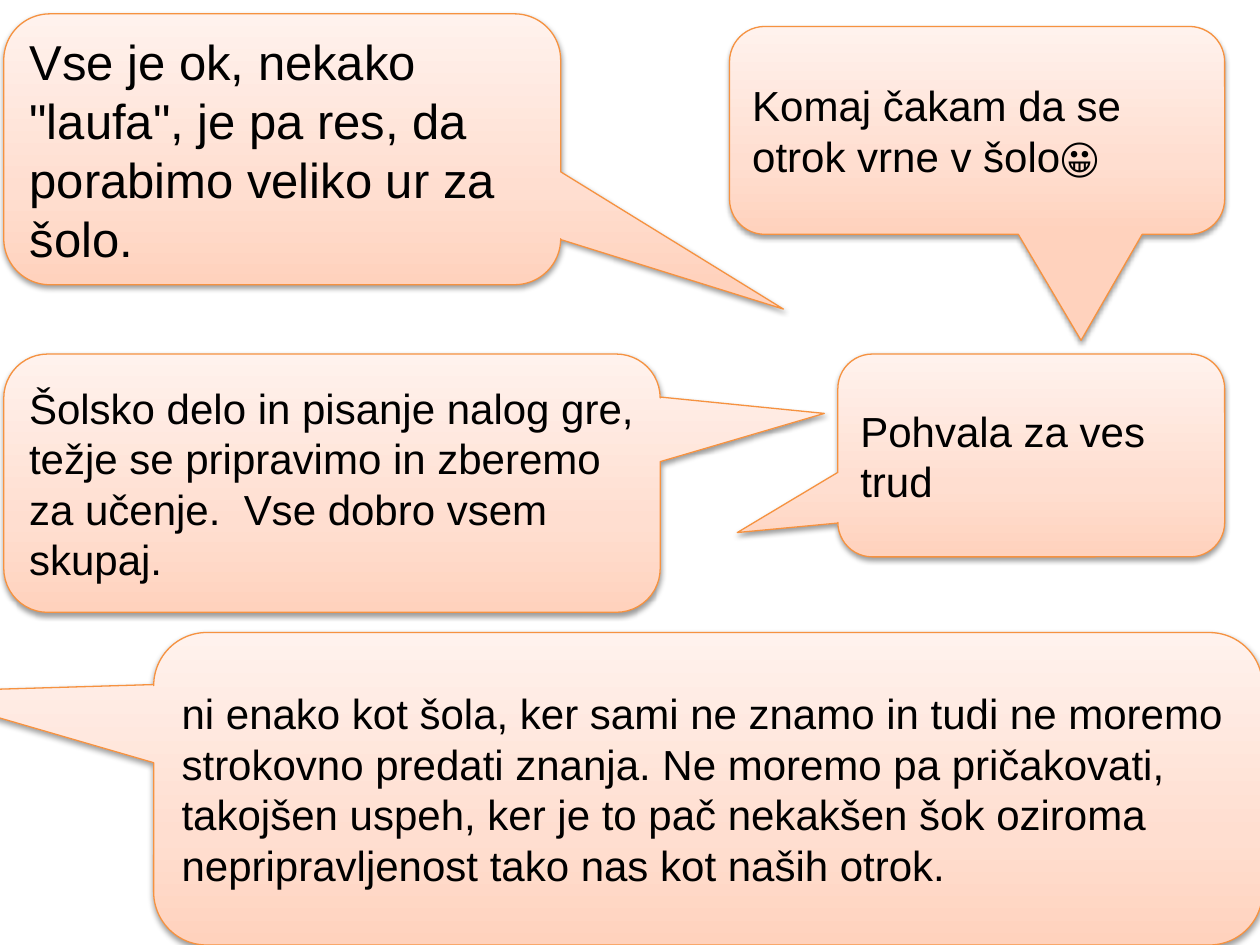
"""Builds a slide of five speech bubbles with parents' comments on home schooling."""
from lxml import etree
from pptx import Presentation
from pptx.dml.color import RGBColor as RGB
from pptx.enum.shapes import MSO_SHAPE as SHAPE
from pptx.enum.text import MSO_ANCHOR as ANCHOR, PP_ALIGN as ALIGN
from pptx.util import Inches, Pt

COLORS = {"bottom": "FFD2BD", "middle": "FFDED0", "top": "FFF2ED",
          "line": "F69240", "text": "000000", "shadow": "000000"}
STOPS = [(0, "bottom"), (35, "middle"), (100, "top")]
FONT = "Arial"
NS = "http://schemas.openxmlformats.org/drawingml/2006/main"

BUBBLES = [
    {"box": (0.03, 2.81, 5.21, 2.05), "tip": (0.75, -0.27), "size": 24,
     "text": "Šolsko delo in pisanje nalog gre, težje se pripravimo in zberemo "
             "za učenje.  Vse dobro vsem skupaj."},
    {"box": (0.03, 0.11, 4.42, 2.15), "tip": (0.9, 0.59), "size": 28,
     "text": "Vse je ok, nekako \"laufa\", je pa res, da porabimo veliko ur za šolo."},
    {"box": (5.79, 0.21, 3.93, 1.65), "tip": (0.21, 1.01), "size": 24,
     "text": "Komaj čakam da se otrok vrne v šolo😀"},
    {"box": (1.22, 5.02, 8.8, 2.48), "tip": (-0.72, -0.31), "size": 24,
     "text": "ni enako kot šola, ker sami ne znamo in tudi ne moremo strokovno "
             "predati znanja. Ne moremo pa pričakovati, takojšen uspeh, ker je to "
             "pač nekakšen šok oziroma nepripravljenost tako nas kot naših otrok."},
    {"box": (6.65, 2.81, 3.07, 1.61), "tip": (-0.76, 0.38), "size": 24,
     "text": "Pohvala za ves trud"},
]


def add_gradient(sp):
    stops = "".join(f'<a:gs pos="{pos * 1000}"><a:srgbClr val="{COLORS[name]}"/></a:gs>'
                    for pos, name in STOPS)
    sp._element.spPr.append(etree.fromstring(
        f'<a:gradFill xmlns:a="{NS}" rotWithShape="1"><a:gsLst>{stops}</a:gsLst>'
        '<a:lin ang="16200000" scaled="0"/></a:gradFill>'))


def add_shadow(sp):
    sp._element.spPr.append(etree.fromstring(
        f'<a:effectLst xmlns:a="{NS}"><a:outerShdw blurRad="{Pt(3.1)}" '
        f'dist="{Pt(1.6)}" dir="5400000" rotWithShape="0">'
        f'<a:srgbClr val="{COLORS["shadow"]}"><a:alpha val="38000"/></a:srgbClr>'
        '</a:outerShdw></a:effectLst>'))


def add_bubble(slide, bubble):
    sp = slide.shapes.add_shape(SHAPE.ROUNDED_RECTANGULAR_CALLOUT,
                                *map(Inches, bubble["box"]))
    for i, value in enumerate((*bubble["tip"], 0.17)):
        sp.adjustments[i] = value
    add_gradient(sp)
    sp.line.color.rgb = RGB.from_string(COLORS["line"])
    sp.line.width = Pt(0.75)
    add_shadow(sp)
    tf = sp.text_frame
    tf.word_wrap = True
    tf.vertical_anchor = ANCHOR.MIDDLE
    p = tf.paragraphs[0]
    p.alignment = ALIGN.LEFT
    r = p.add_run()
    r.text = bubble["text"]
    r.font.name = FONT
    r.font.size = Pt(bubble["size"])
    r.font.color.rgb = RGB.from_string(COLORS["text"])


def main():
    prs = Presentation()
    prs.slide_width, prs.slide_height = Inches(10), Inches(7.5)
    slide = prs.slides.add_slide(prs.slide_layouts[6])
    for bubble in BUBBLES:
        add_bubble(slide, bubble)
    prs.save("out.pptx")


if __name__ == "__main__":
    main()
